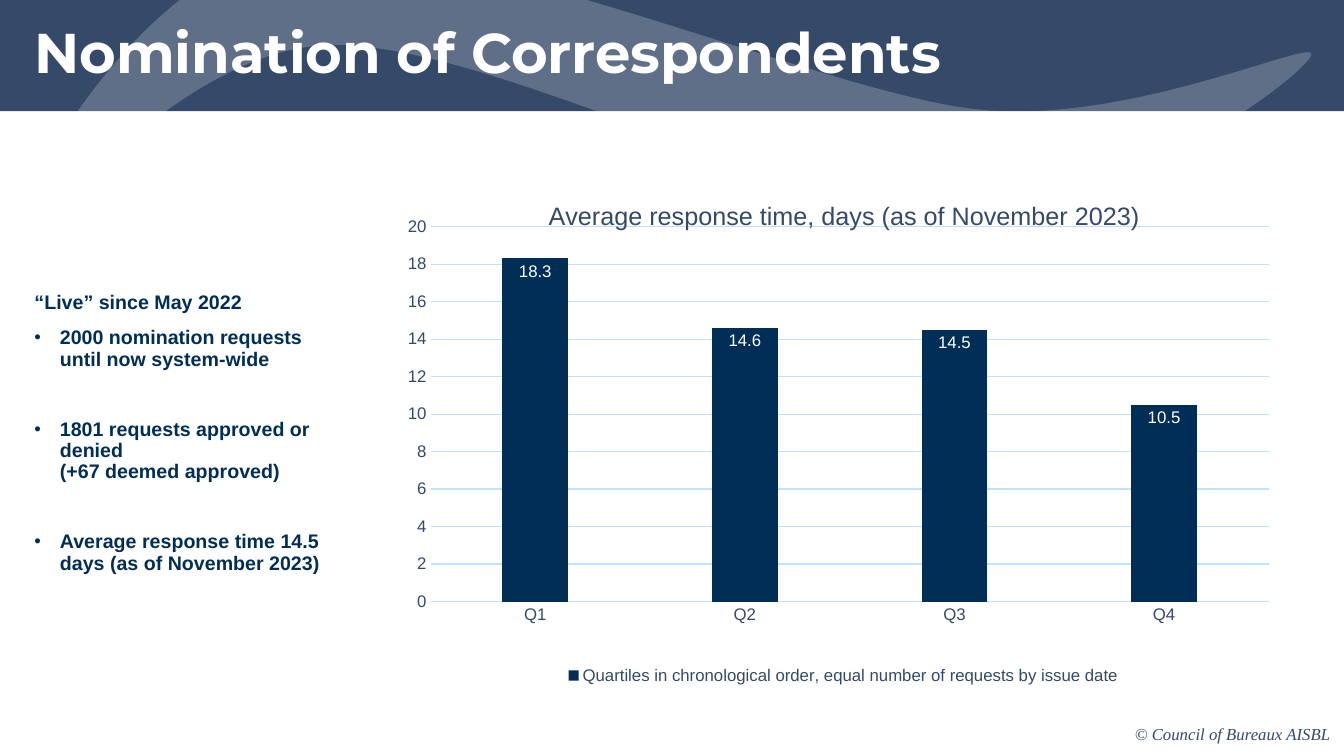
import dataclasses

import lxml.etree
import pptx
import pptx.chart.data
import pptx.dml.color
import pptx.enum.chart
import pptx.enum.shapes
import pptx.enum.text
import pptx.oxml
import pptx.oxml.ns
import pptx.util

Cm = pptx.util.Cm
Pt = pptx.util.Pt
qn = pptx.oxml.ns.qn


@dataclasses.dataclass(frozen=True)
class Theme:
    band: str = "354968"
    navy: str = "002E57"
    grid: str = "C0E1FF"
    white: str = "FFFFFF"
    sans: str = "Arial"
    heading: str = "Montserrat"
    serif: str = "Times New Roman"
    title_size: int = 40
    chart_title_size: int = 18
    body_size: int = 14
    small_size: int = 12


def rgb(value):
    return pptx.dml.color.RGBColor.from_string(value)


def set_font(font, size, color, name, bold=False, italic=False):
    font.size = Pt(size)
    font.color.rgb = rgb(color)
    font.name = name
    font.bold = bold
    font.italic = italic


def write(p, text, before=0, spacing=None, bullet=False, align=None, **font):
    if bullet:
        pPr = p._p.get_or_add_pPr()
        pPr.set("marL", str(Cm(0.64)))
        pPr.set("indent", str(-Cm(0.64)))
        lxml.etree.SubElement(pPr, qn("a:buSzPct"), val="95000")
        lxml.etree.SubElement(pPr, qn("a:buFont"), typeface=font["name"])
        lxml.etree.SubElement(pPr, qn("a:buChar"), char="•")
    p.space_before = Pt(before)
    if spacing:
        p.line_spacing = spacing
    if align is not None:
        p.alignment = align
    for i, line in enumerate(text.split("\n")):
        if i:
            p.add_line_break()
        r = p.add_run()
        r.text = line
        set_font(r.font, **font)


def place_layout(parent, index, **values):
    for old in parent.findall(qn("c:layout")):
        parent.remove(old)
    layout = pptx.oxml.parse_xml(
        '<c:layout xmlns:c="http://schemas.openxmlformats.org/drawingml/2006/chart"/>')
    manual = lxml.etree.SubElement(layout, qn("c:manualLayout"))
    for tag, value in values.items():
        lxml.etree.SubElement(manual, qn("c:" + tag), val=str(value))
    parent.insert(index, layout)


class Deck:
    def __init__(self, theme):
        self.theme = theme
        self.prs = pptx.Presentation()
        self.prs.slide_width, self.prs.slide_height = Cm(33.87), Cm(19.05)
        self.s = self.prs.slides.add_slide(self.prs.slide_layouts[5])

    def paint(self, sp, color):
        sp.shadow.inherit = False
        sp.fill.solid()
        sp.fill.fore_color.rgb = rgb(color)
        sp.line.fill.background()

    def band(self, height):
        sp = self.s.shapes.add_shape(
            pptx.enum.shapes.MSO_SHAPE.RECTANGLE, 0, 0, self.prs.slide_width, Cm(height))
        self.paint(sp, self.theme.band)

    def swoosh(self, start, curves, opacity):
        builder = self.s.shapes.build_freeform(Cm(start[0]), Cm(start[1]))
        builder.add_line_segments([(Cm(x), Cm(y)) for _, _, (x, y) in curves], close=True)
        sp = builder.convert_to_shape()
        self.paint(sp, self.theme.white)
        for segment, curve in zip(list(sp.element.iter(qn("a:lnTo"))), curves):
            bend = lxml.etree.Element(qn("a:cubicBezTo"))
            for x, y in curve:
                lxml.etree.SubElement(bend, qn("a:pt"), x=str(Cm(x) - sp.left),
                                      y=str(Cm(y) - sp.top))
            segment.getparent().replace(segment, bend)
        color = sp.element.spPr.find(qn("a:solidFill"))[0]
        lxml.etree.SubElement(color, qn("a:alpha"), val=str(opacity * 1000))

    def title(self, text, box):
        sp = self.s.shapes.title
        sp.left, sp.top, sp.width, sp.height = map(Cm, box)
        sp.element.getparent().append(sp.element)
        tf = sp.text_frame
        tf.word_wrap = True
        tf.vertical_anchor = pptx.enum.text.MSO_ANCHOR.MIDDLE
        write(tf.paragraphs[0], text, spacing=0.9, align=pptx.enum.text.PP_ALIGN.LEFT,
              size=self.theme.title_size, color=self.theme.white,
              name=self.theme.heading, bold=True)

    def text(self, paragraphs, box, wrap=True, inset_top=0.13, **style):
        tf = self.s.shapes.add_textbox(*map(Cm, box)).text_frame
        tf.word_wrap = wrap
        tf.margin_top = Cm(inset_top)
        for i, (text, options) in enumerate(paragraphs):
            p = tf.add_paragraph() if i else tf.paragraphs[0]
            write(p, text, **style, **options)

    def column_chart(self, title, name, values, box):
        th = self.theme
        width, height = box[2:]
        data = pptx.chart.data.CategoryChartData()
        data.categories = list(values)
        data.add_series(name, list(values.values()))
        chart = self.s.shapes.add_chart(
            pptx.enum.chart.XL_CHART_TYPE.COLUMN_CLUSTERED, *map(Cm, box), data).chart
        set_font(chart.font, th.small_size, th.band, th.sans)

        chart.has_title = True
        write(chart.chart_title.text_frame.paragraphs[0], title,
              size=th.chart_title_size, color=th.band, name=th.sans)
        place_layout(chart.chart_title.element, 1, xMode="edge", yMode="edge",
                     x=3.74 / width, y=0.31 / height)
        place_layout(chart.element.find(".//" + qn("c:plotArea")), 0,
                     layoutTarget="inner", xMode="edge", yMode="edge",
                     x=0.88 / width, y=1.11 / height, w=21.13 / width, h=9.45 / height)

        chart.has_legend = True
        chart.legend.position = pptx.enum.chart.XL_LEGEND_POSITION.BOTTOM
        chart.legend.include_in_layout = False
        set_font(chart.legend.font, th.small_size, th.band, th.sans)

        for axis in (chart.category_axis, chart.value_axis):
            axis.major_tick_mark = pptx.enum.chart.XL_TICK_MARK.NONE
            set_font(axis.tick_labels.font, th.small_size, th.band, th.sans)
        value_axis = chart.value_axis
        value_axis.minimum_scale, value_axis.maximum_scale = 0, 20
        value_axis.major_unit = 2
        value_axis.format.line.fill.background()
        for line in (chart.category_axis.format.line, value_axis.major_gridlines.format.line):
            line.color.rgb = rgb(th.grid)
            line.width = Pt(0.75)

        plot = chart.plots[0]
        plot.gap_width, plot.overlap = 219, -27
        plot.vary_by_categories = False
        series = plot.series[0]
        series.format.fill.solid()
        series.format.fill.fore_color.rgb = rgb(th.navy)
        labels = series.data_labels
        labels.show_value = True
        labels.position = pptx.enum.chart.XL_LABEL_POSITION.INSIDE_END
        set_font(labels.font, th.small_size, th.white, th.sans)


def main():
    theme = Theme()
    deck = Deck(theme)
    deck.band(2.8)
    deck.swoosh((0.13, 6.35), [
        ((0.28, 6.76), (4.24, 1.3), (8.23, 1.14)),
        ((12.24, 0.99), (19.99, 5.36), (24.1, 5.38)),
        ((28.24, 5.44), (32.99, 1.83), (33.05, 1.37)),
        ((33.12, 0.94), (28.3, 3.23), (24.49, 2.74)),
        ((20.68, 2.29), (11.33, -1.83), (7.26, -1.27)),
        ((3.2, -0.71), (-0.05, 5.94), (0.13, 6.35)),
    ], opacity=21)
    deck.text([("© Council of Bureaux AISBL", {})], (28.35, 18.11, 5.51, 0.76), wrap=False,
              size=theme.small_size, color=theme.band, name=theme.serif, italic=True)
    deck.title("Nomination of Correspondents", (0.61, -0.13, 32.44, 3.05))
    bullet, spaced_bullet = ({"bullet": True, "before": before} for before in (10, 35))
    deck.text([
        ("“Live” since May 2022", {}),
        ("2000 nomination requests until now system-wide", bullet),
        ("1801 requests approved or denied\n(+67 deemed approved)", spaced_bullet),
        ("Average response time 14.5 days (as of November 2023)", spaced_bullet),
    ], (0.62, 5.46, 8.28, 11.02), inset_top=1.92, spacing=0.9,
        size=theme.body_size, color=theme.navy, name=theme.sans, bold=True)
    deck.column_chart(
        "Average response time, days (as of November 2023)",
        "Quartiles in chronological order, equal number of requests by issue date",
        {"Q1": 18.3, "Q2": 14.6, "Q3": 14.5, "Q4": 10.5}, (9.97, 4.6, 22.58, 12.75))
    deck.prs.save("out.pptx")


if __name__ == "__main__":
    main()
